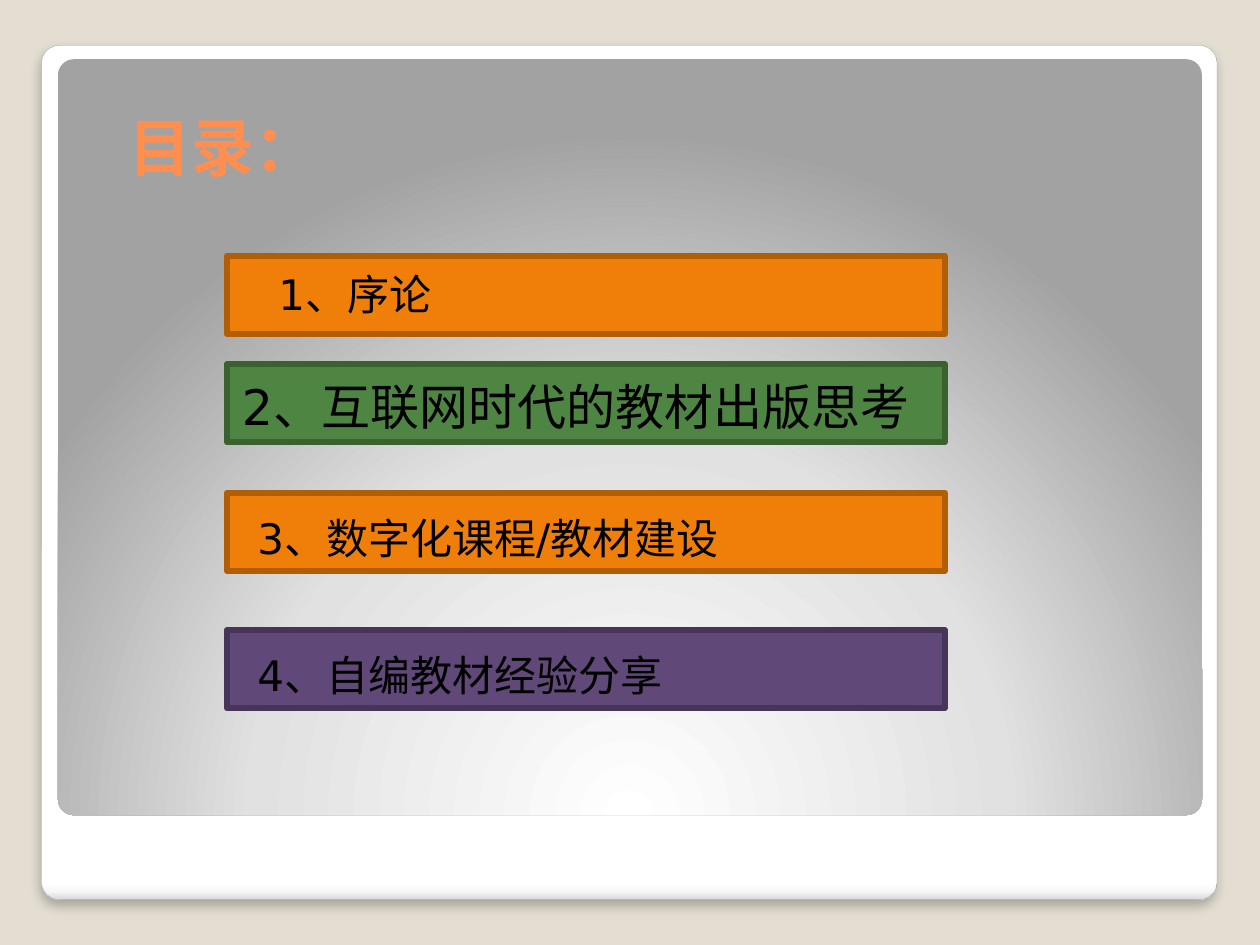
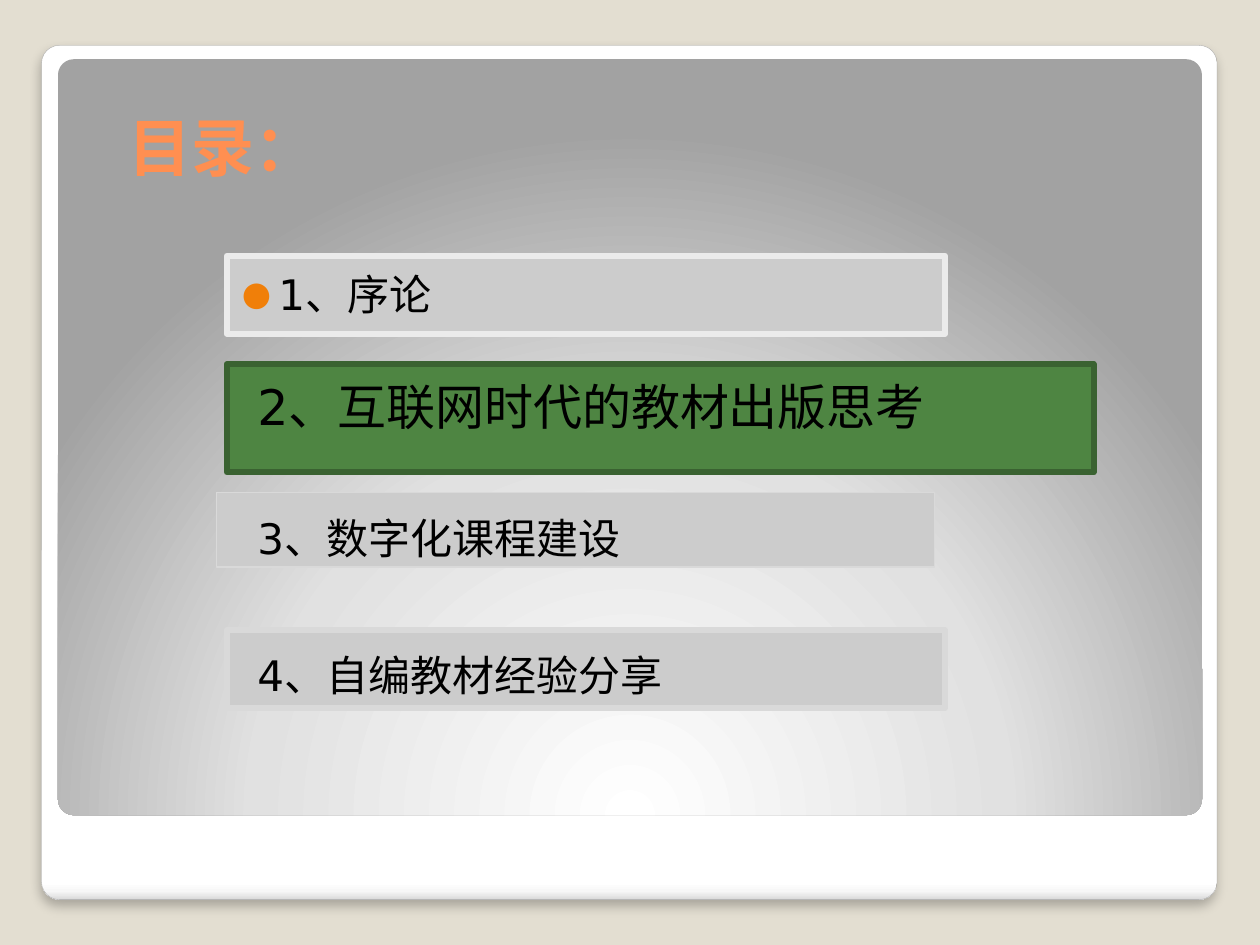
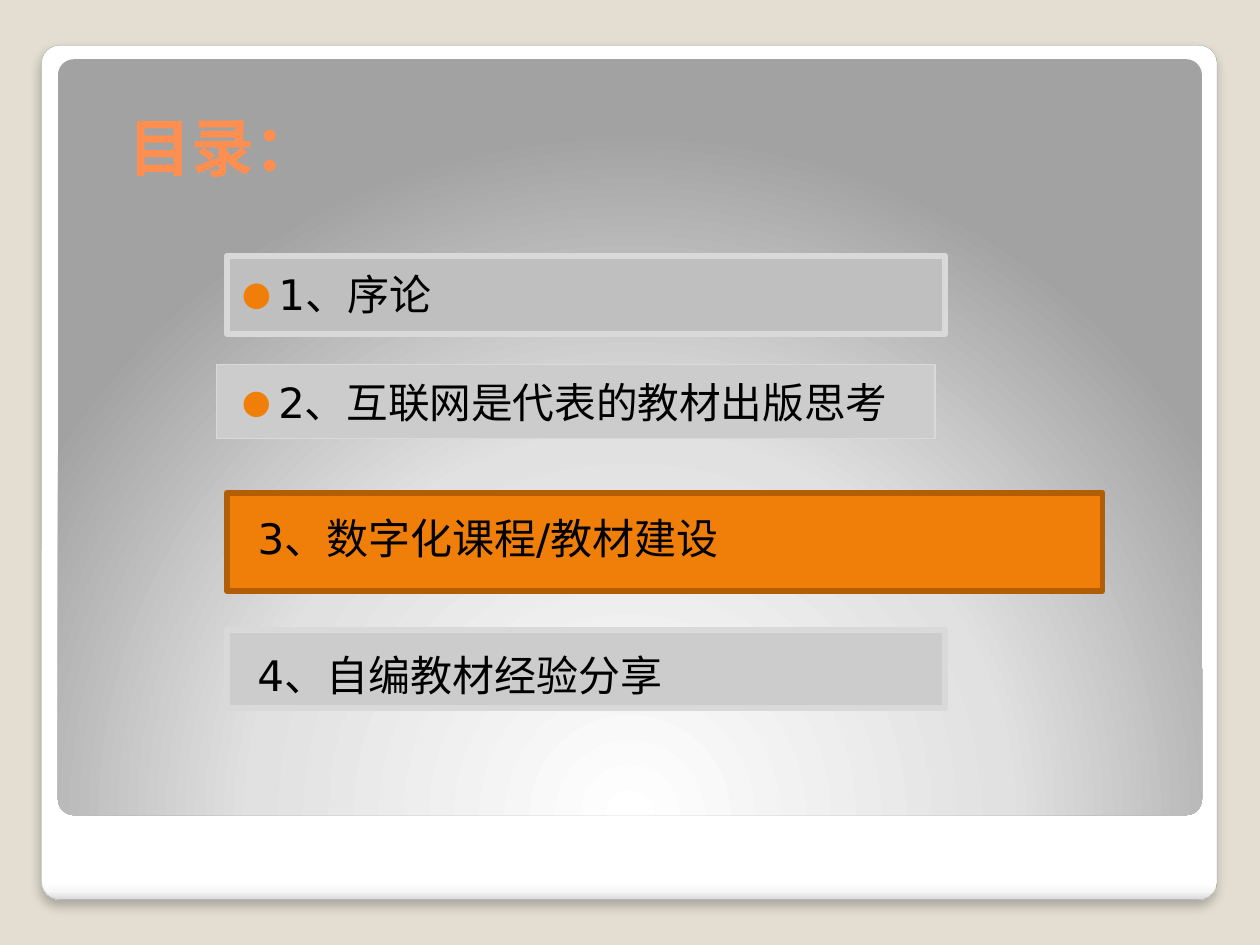
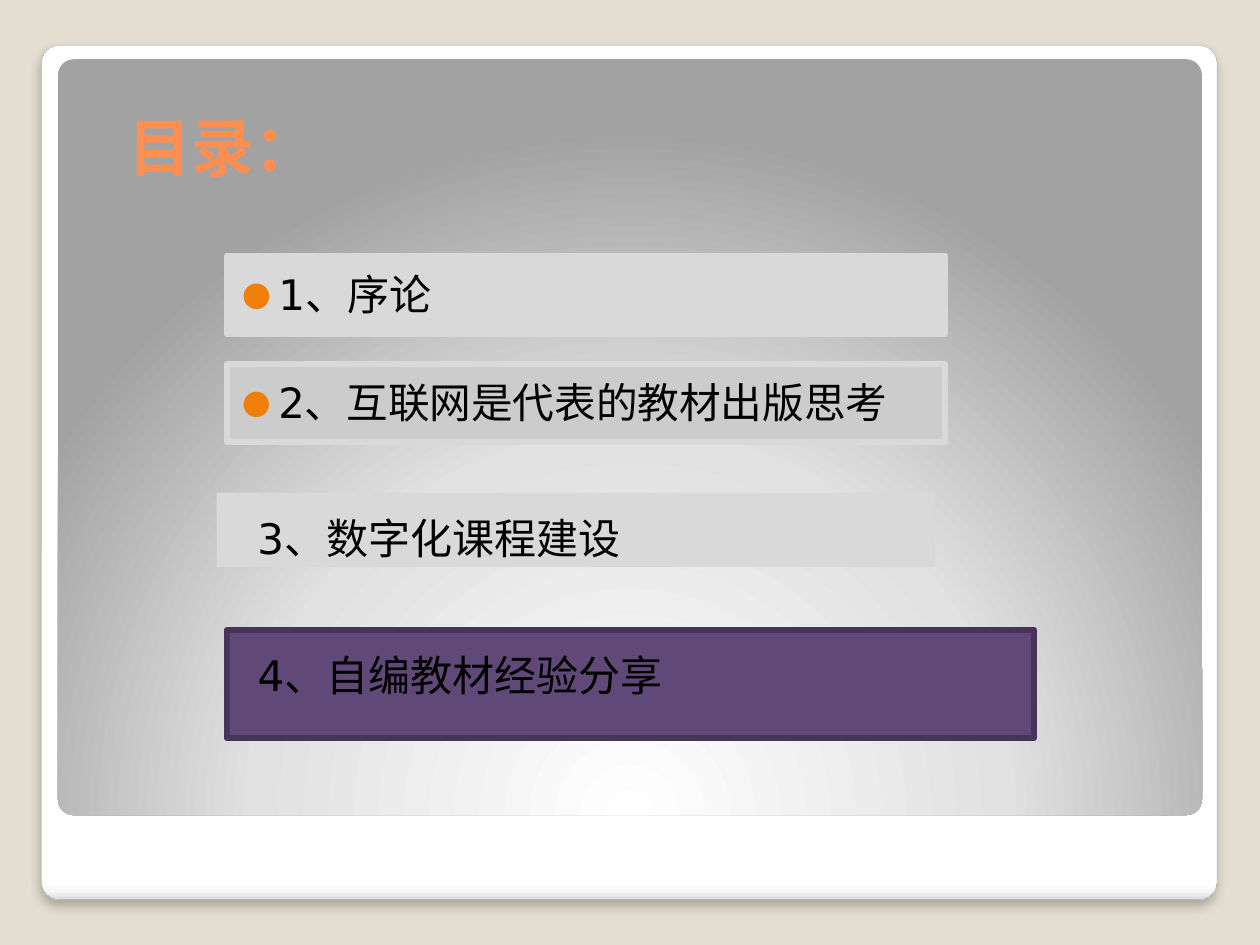
import collections
import pptx
import pptx.util
import pptx.dml.color
import pptx.enum.shapes
import pptx.enum.text
import pptx.oxml
import pptx.oxml.ns

Inches, Pt = pptx.util.Inches, pptx.util.Pt
RGBColor = pptx.dml.color.RGBColor
Shape = pptx.enum.shapes.MSO_SHAPE
Enum = pptx.enum.text

# Colours
SAND = RGBColor(0xE3, 0xDE, 0xD1)
EDGE = RGBColor(0xA4, 0xA4, 0xA4)
CORAL = RGBColor(0xFF, 0x8F, 0x51)
BLACK = RGBColor(0, 0, 0)
ORANGE = RGBColor(0xF0, 0x7F, 0x09)
RUST = RGBColor(0xB2, 0x5E, 0x07)
GREEN = RGBColor(0x4E, 0x85, 0x42)
FOREST = RGBColor(0x3A, 0x62, 0x31)
PURPLE = RGBColor(0x60, 0x48, 0x78)
PLUM = RGBColor(0x47, 0x35, 0x59)
GREY = RGBColor(0xCC, 0xCC, 0xCC)
DIM = RGBColor(0xBF, 0xBF, 0xBF)
PALE = RGBColor(0xD9, 0xD9, 0xD9)
LIGHT = RGBColor(0xEB, 0xEB, 0xEB)

# Shared formats
FONT = "DejaVu Sans"
INSET = {"margin_left": Inches(0.2), "margin_top": Inches(0.1),
         "margin_right": Inches(0.1), "margin_bottom": Inches(0.05),
         "word_wrap": True, "auto_size": Enum.MSO_AUTO_SIZE.NONE,
         "vertical_anchor": Enum.MSO_ANCHOR.TOP}
PARA = {"alignment": Enum.PP_ALIGN.LEFT, "space_before": Pt(2.5)}
HEAD = {"name": FONT, "size": Pt(36), "bold": True}

# Agenda rows: left edges of text and bar, and the top of each row
LEFT, BAR = 1.72, 1.8
TOPS = [2.03, 2.89, 3.91, 5]
ORDER = [1, 2, 3, 0]

# A row; a flat one carries its fill on the text box itself
Row = collections.namedtuple(
    "Row", "text fill line size dot lead wide high flat",
    defaults=[24, False, True, 5.7, 0.62, False])

INTRO = {"text": "1、序论", "dot": True, "lead": False}
NET = {"text": "2、互联网时代的教材出版思考", "size": 28,
       "fill": GREEN, "line": FOREST}
WEB = {"text": "2、互联网是代表的教材出版思考", "size": 23.8, "dot": True,
       "lead": False, "fill": GREY, "line": PALE}
COURSE = {"text": "3、数字化课程/教材建设", "fill": ORANGE, "line": RUST}
BRIEF = {"text": "3、数字化课程建设", "high": 0.59, "flat": True}
SHARE = {"text": "4、自编教材经验分享"}
FLAT = {"high": 0.59, "flat": True}

SLIDES = [
    [Row(**INTRO, fill=ORANGE, line=RUST),
     Row(**NET, lead=False),
     Row(**COURSE),
     Row(**SHARE, fill=PURPLE, line=PLUM)],
    [Row(**INTRO, fill=GREY, line=LIGHT),
     Row(**NET, wide=6.88, high=0.86),
     Row(**BRIEF, fill=GREY, line=PALE),
     Row(**SHARE, fill=GREY, line=PALE)],
    [Row(**INTRO, fill=DIM, line=PALE),
     Row(**WEB, **FLAT),
     Row(**COURSE, wide=6.95, high=0.78),
     Row(**SHARE, fill=GREY, line=PALE)],
    [Row(**INTRO, fill=PALE, line=PALE),
     Row(**WEB),
     Row(**BRIEF, fill=PALE, line=None),
     Row(**SHARE, fill=PURPLE, line=PLUM, wide=6.41, high=0.86)],
]


def put(item, form):
    for name, value in form.items():
        setattr(item, name, value)


def place(item, left, top, wide, high):
    put(item, {"left": Inches(left), "top": Inches(top),
               "width": Inches(wide), "height": Inches(high)})


def node(xml):
    space = pptx.oxml.ns.nsdecls("a")
    return pptx.oxml.parse_xml(xml.replace(">", f" {space}>", 1))


def paint(shape, fill, line, width):
    shape.fill.solid()
    shape.fill.fore_color.rgb = fill
    if line is None:
        shape.line.fill.background()
    else:
        shape.line.color.rgb = line
        shape.line.width = Pt(width)


# Frame: white card with a shaded panel, moved to the layout
def panel(slide, box, stops, shade):
    shape = slide.shapes.add_shape(Shape.ROUNDED_RECTANGLE, *map(Inches, box))
    shape.adjustments[0] = 0.021
    shape.shadow.inherit = False
    shape.line.fill.background()
    marks = "".join(f'<a:gs pos="{spot * 1000}"><a:srgbClr val="{tint}"/></a:gs>'
                    for spot, tint in stops)
    props = shape.element.spPr
    props.find(pptx.oxml.ns.qn("a:prstGeom")).addnext(node(
        f'<a:gradFill rotWithShape="1"><a:gsLst>{marks}</a:gsLst>{shade}</a:gradFill>'))
    return shape


def frame(slide, layout):
    card = panel(slide, (0.33, 0.36, 9.33, 6.78),
                 [(0, "FFFFFF"), (98, "FFFFFF"), (99, "F7F7F7"), (100, "DADADA")],
                 '<a:lin ang="5400000" scaled="0"/>')
    card.line.color.rgb = EDGE
    card.line.width = Pt(0.16)
    glow = card.element.spPr.find(pptx.oxml.ns.qn("a:effectLst"))
    glow.append(node(
        f'<a:outerShdw blurRad="{Pt(6)}" dist="{Pt(4)}" dir="5400000" rotWithShape="0">'
        '<a:srgbClr val="000000"><a:alpha val="25000"/></a:srgbClr></a:outerShdw>'))
    inner = panel(slide, (0.46, 0.47, 9.08, 6),
                  [(0, "FFFFFF"), (55, "E1E1E1"), (100, "A2A2A2")],
                  '<a:path path="circle"><a:fillToRect l="50000" t="175000" '
                  'r="50000" b="-75000"/></a:path>')
    for spot, shape in enumerate((card, inner), 2):
        layout.shapes.element.insert(spot, shape.element)


# Title
def title(slide, text):
    shape = slide.shapes.title
    place(shape, 0.92, 0.74, 8.2, 0.84)
    body = shape.text_frame
    body.text = text
    body.vertical_anchor = Enum.MSO_ANCHOR.MIDDLE
    para = body.paragraphs[0]
    para.alignment = Enum.PP_ALIGN.LEFT
    put(para.runs[0].font, HEAD)
    para.runs[0].font.color.rgb = CORAL


# Row text: hanging indent, with or without a dot
def write(body, row):
    put(body, INSET)
    para = body.paragraphs[0]
    put(para, PARA)
    props = para._p.get_or_add_pPr()
    props.set("marL", str(Inches(0.29)))
    props.set("indent", str(-Inches(0.29)))
    marks = ([f'<a:buClr><a:srgbClr val="{ORANGE}"/></a:buClr>',
              '<a:buSzPct val="80000"/>', f'<a:buFont typeface="{FONT}"/>',
              '<a:buChar char="●"/>'] if row.dot else ['<a:buNone/>'])
    for mark in marks:
        tag, rest = mark[:6], mark[6:]
        props.append(node(mark) if not mark.endswith("/>") or ">" in mark[:-1]
                     else node(tag + rest[:-2] + "></" + mark[1:-2].split()[0] + ">"))
    parts = [(" ", 28)] if row.lead else []
    for text, size in parts + [(row.text, row.size)]:
        run = para.add_run()
        run.text = text
        put(run.font, {"name": FONT, "size": Pt(size)})
        run.font.color.rgb = BLACK


# Agenda row: bar behind, text in front
def entry(slide, row, top, holder):
    if not row.flat:
        bar = slide.shapes.add_shape(Shape.RECTANGLE, *map(
            Inches, (BAR, top, row.wide, row.high)))
        bar.shadow.inherit = False
        paint(bar, row.fill, row.line, 3.35)
    if holder is None:
        holder = slide.shapes.add_textbox(0, 0, 0, 0)
    else:
        slide.shapes.element.append(holder.element)
    high = row.high if row.flat else round(row.high * 0.95, 2)
    place(holder, LEFT, top, row.wide, high)
    if row.flat:
        paint(holder, row.fill, row.line, 0.75)
    write(holder.text_frame, row)


def agenda(slide, rows):
    title(slide, "目录：")
    for spot in ORDER:
        holder = slide.placeholders[1] if spot == 1 else None
        entry(slide, rows[spot], TOPS[spot], holder)


def main():
    deck = pptx.Presentation()
    put(deck, {"slide_width": Inches(10), "slide_height": Inches(7.5)})
    back = deck.slide_master.background.fill
    back.solid()
    back.fore_color.rgb = SAND
    layout = deck.slide_layouts[1]
    for spot, rows in enumerate(SLIDES):
        slide = deck.slides.add_slide(layout)
        if spot == 0:
            frame(slide, layout)
        agenda(slide, rows)
    deck.save("out.pptx")


if __name__ == "__main__":
    main()
